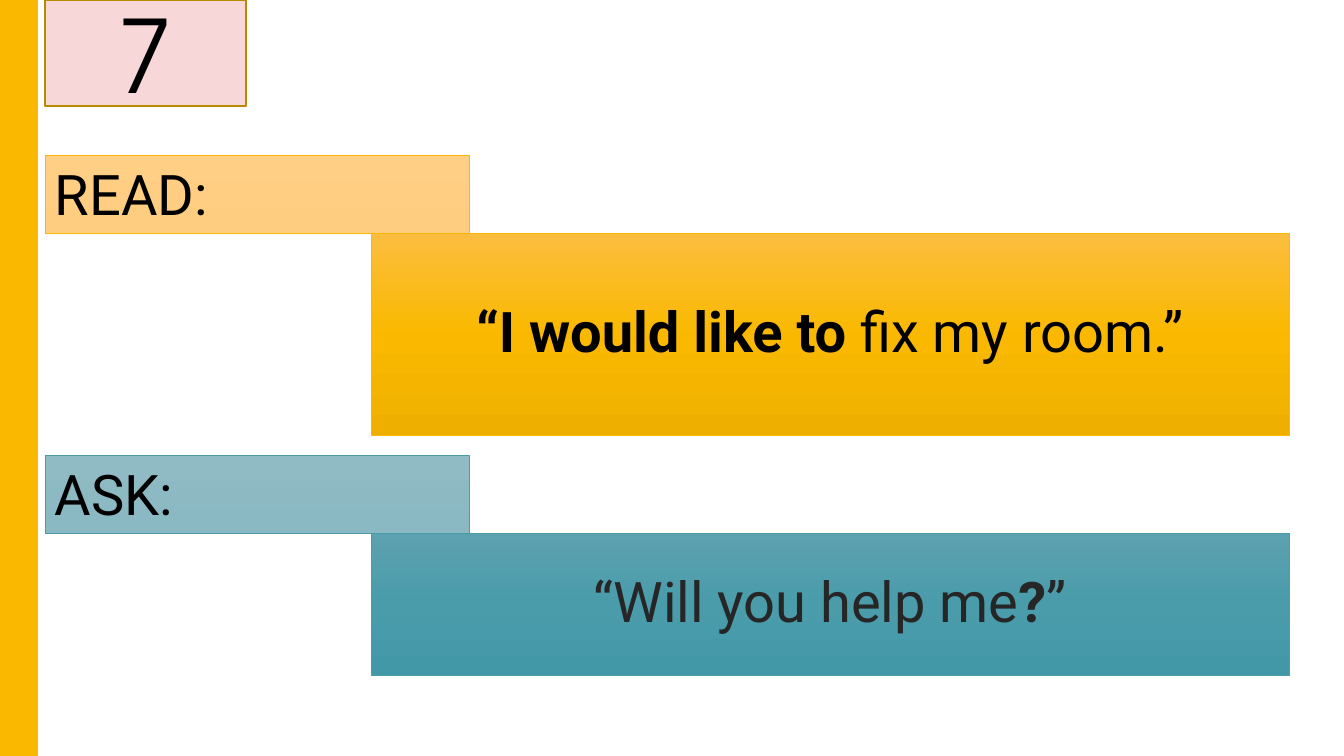
from lxml.etree import SubElement
from pptx import Presentation
from pptx.dml.color import RGBColor
from pptx.enum.shapes import MSO_SHAPE
from pptx.enum.text import MSO_ANCHOR, PP_ALIGN
from pptx.oxml.ns import qn
from pptx.util import Emu, Pt

SCALE = 914400 / 100.8
WIDE, HIGH = 1344, 756
SIDES = ("left", "top", "right", "bottom")


def px(num):
    return Emu(round(num * SCALE))


def color(code):
    return RGBColor.from_string(code)


def paint(shape, tones):
    """Fill with one colour, or with evenly spaced stops from top to bottom."""
    if len(tones) == 1:
        shape.fill.solid()
        shape.fill.fore_color.rgb = color(tones[0])
        return
    shape.fill.gradient()
    shape.fill.gradient_angle = 270
    stops = shape.element.spPr.find(".//" + qn("a:gsLst"))
    for stop in list(stops):
        stops.remove(stop)
    for i, tone in enumerate(tones):
        stop = SubElement(stops, qn("a:gs"), pos=str(100000 * i // (len(tones) - 1)))
        SubElement(stop, qn("a:srgbClr"), val=tone)


def block(slide, box, tones, edge=None, weight=0.5):
    shape = slide.shapes.add_shape(MSO_SHAPE.RECTANGLE, *map(px, box))
    shape.shadow.inherit = False
    paint(shape, tones)
    if edge:
        shape.line.color.rgb = color(edge)
        shape.line.width = Pt(weight)
    else:
        shape.line.fill.background()
    return shape


def write(shape, runs, font, frame, para):
    """Runs are (text, bold) pairs; the dicts hold format values."""
    text = shape.text_frame
    text.word_wrap = True
    line = text.paragraphs[0]
    for part, form in ((text, frame), (line, para)):
        for key, value in form.items():
            setattr(part, key, value)
    for words, bold in runs:
        run = line.add_run()
        run.text = words
        run.font.color.rgb = color(font["tint"])
        for key, value in {"name": font["name"], "size": Pt(font["size"]), "bold": bold}.items():
            setattr(run.font, key, value)


def number(slide, box, digit):
    shape = block(slide, box, ["F7D7D8"], "B98900", 1)
    write(shape, [(digit, False)],
          {"name": "TeX Gyre Adventor", "size": 72, "tint": "000000"},
          {"vertical_anchor": MSO_ANCHOR.MIDDLE}, {"alignment": PP_ALIGN.CENTER})


def prompt(slide, box, label, runs, tint, pale, rich, edge):
    """A label at the top left, with its sentence panel below and to the right."""
    left, top, width, height = box
    head, shift = 78, 326
    font = {"name": "Roboto", "size": 40}

    # Sentence panel
    panel = block(slide, (left + shift, top + head, width - shift, height - head), rich, edge)
    frame = {"margin_" + side: px(20) for side in SIDES}
    write(panel, runs, font | {"tint": tint},
          frame | {"vertical_anchor": MSO_ANCHOR.MIDDLE},
          {"alignment": PP_ALIGN.CENTER, "line_spacing": 0.9})

    # Label
    tag = block(slide, (left, top, 424, head), pale, edge)
    write(tag, [(label, False)], font | {"tint": "000000"},
          {"vertical_anchor": MSO_ANCHOR.TOP}, {"alignment": PP_ALIGN.LEFT})


def main():
    deck = Presentation()
    deck.slide_width, deck.slide_height = px(WIDE), px(HIGH)
    slide = deck.slides.add_slide(deck.slide_layouts[6])

    # Side band and number
    block(slide, (0, 0, 38, HIGH), ["FAB900"])
    number(slide, (45, 0, 201, 106), "7")

    # Sentence to read and question to ask
    prompt(slide, (45, 155, 1244, 280), "READ:",
           [("“I would like to ", True), ("fix my room.”", False)], "000000",
           ["FFCF86", "FFCD80"], ["FBBD40", "FAB900", "EFAF00"], "FAB900")
    prompt(slide, (45, 455, 1244, 220), "ASK:",
           [("“Will you help me", False), ("?", True), ("”", False)], "262626",
           ["90BAC4", "8AB8C3"], ["5CA1AF", "4A9CAB", "4398A8"], "4B9BAA")

    deck.save("out.pptx")


if __name__ == "__main__":
    main()
